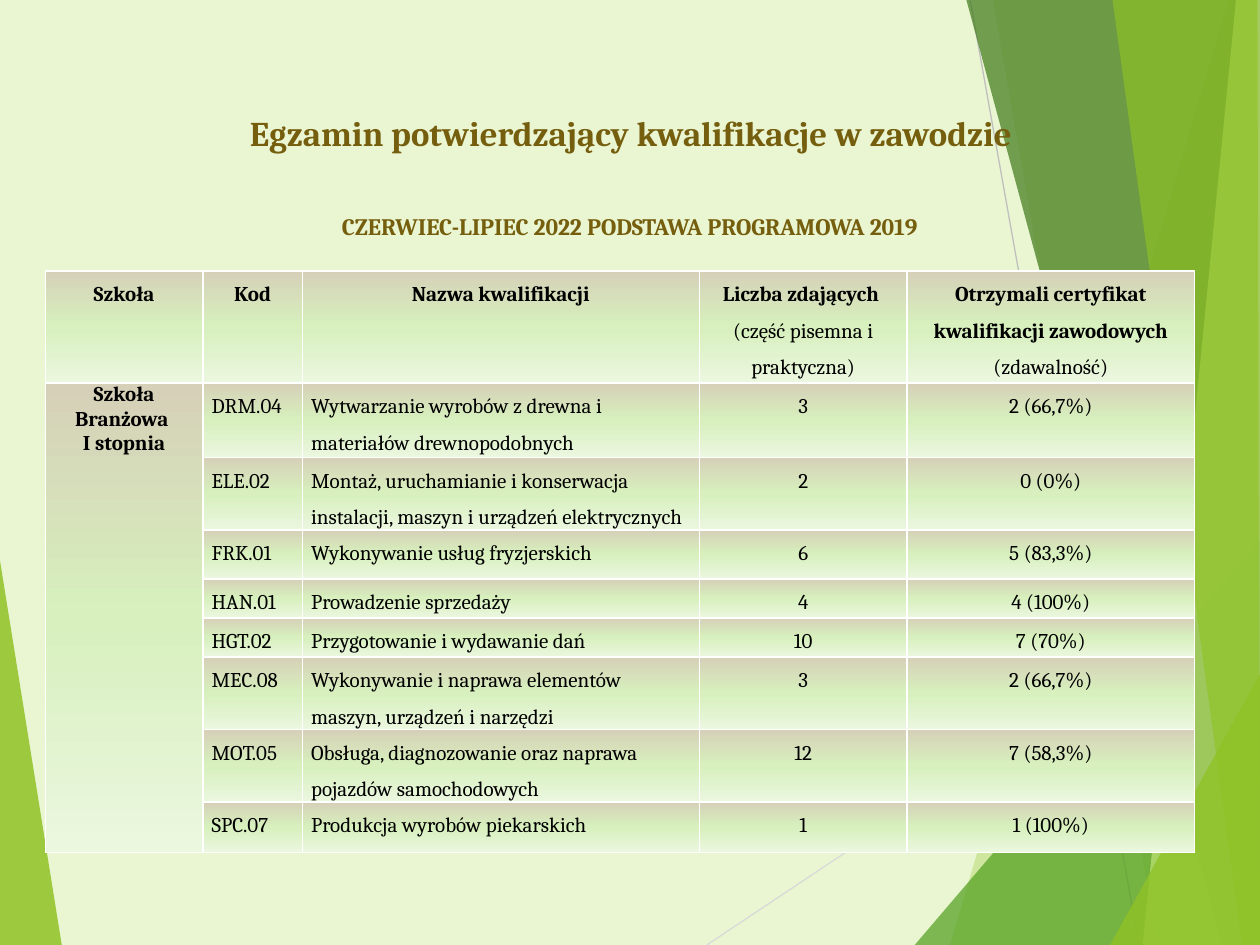
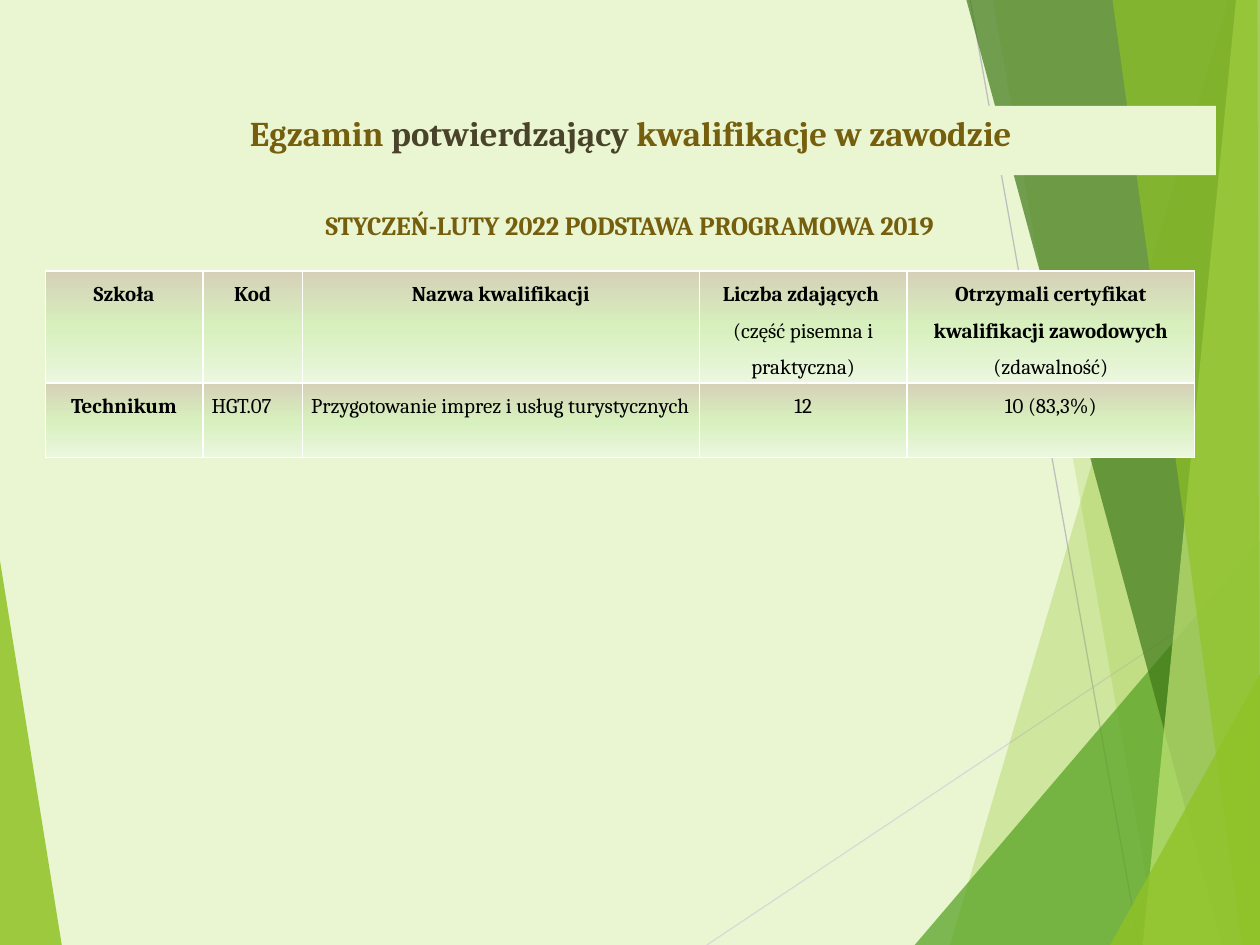
from copy import deepcopy

from pptx import Presentation
from pptx.dml.color import RGBColor
from pptx.enum.shapes import MSO_CONNECTOR
from pptx.enum.text import MSO_ANCHOR, MSO_AUTO_SIZE, PP_ALIGN
from pptx.oxml import parse_xml
from pptx.oxml.ns import nsdecls, qn
from pptx.util import Inches, Pt

STRAIGHT = MSO_CONNECTOR.STRAIGHT
TOP, MIDDLE = MSO_ANCHOR.TOP, MSO_ANCHOR.MIDDLE
NO_AUTOFIT = MSO_AUTO_SIZE.NONE
LEFT, CENTER = PP_ALIGN.LEFT, PP_ALIGN.CENTER

# Shared style
FONT = "Cambria"
BACKGROUND = "EAF6D1"
GOLD, OLIVE, BLACK, WHITE = "755E0D", "48432A", "000000", "FFFFFF"
GREEN, MID_GREEN, DARK_GREEN, LIME = "90C226", "54A021", "3F7819", "C0E474"
CELL_GRADIENT = [(0, "D6D0B8"), (50, "D7F0BD"), (100, "EBF7DF")]
TITLE_ONLY = 5

# Backdrop: thin lines, then translucent facets (colour, opacity %, corners)
LEFT_FACET = (GREEN, 85, [(0, 4.45), (0.49, 7.5), (0, 7.5)])
THIN_LINES = [
    ("D9D9D9", (5.61, 7.5), (10, 4.57)),
    ("BFBFBF", (7.7, 0), (9.04, 7.5)),
]
RIGHT_FACETS = [
    (GREEN, 30, [(9.75, 0), (7.54, 7.5), (10, 7.5), (10, 0)]),
    (GREEN, 20, [(7.88, 0), (9.19, 7.5), (10, 7.5), (10, 0)]),
    (MID_GREEN, 72, [(7.26, 7.5), (10, 4.29), (10, 7.5)]),
    (DARK_GREEN, 70, [(7.67, 0), (9.7, 7.5), (10, 7.5), (10, 0)]),
    (LIME, 70, [(9.81, 0), (9.07, 7.5), (10, 7.5), (10, 0)]),
    (GREEN, 65, [(8.83, 0), (9.86, 7.5), (10, 7.5), (9.98, 0)]),
    (GREEN, 80, [(8.81, 7.5), (10, 5.35), (10, 7.5)]),
]

# Content
TITLE = ["Egzamin ", "potwierdzający", " kwalifikacje w zawodzie"]
COLUMN_WIDTHS = [1.25, 0.79, 3.15, 1.65, 2.28]
COLUMN_ALIGNMENTS = [CENTER, LEFT, LEFT, CENTER, CENTER]
HEADER_HEIGHT = 0.89
HEADER = [
    ["Szkoła"],
    ["Kod"],
    ["Nazwa kwalifikacji"],
    ["Liczba zdających \v", "(część pisemna i praktyczna)"],
    ["Otrzymali certyfikat kwalifikacji zawodowych ", "(zdawalność)"],
]
# Row height, code, qualification, candidates, certificates
SUMMER_ROWS = [
    (0.59, "DRM.04", "Wytwarzanie wyrobów z drewna i materiałów drewnopodobnych", "3", "2 (66,7%)"),
    (0.54, "ELE.02", "Montaż, uruchamianie i konserwacja instalacji, maszyn i urządzeń "
     "elektrycznych", "2", "0 (0%)"),
    (0.39, "FRK.01", "Wykonywanie usług fryzjerskich", "6", "5 (83,3%)"),
    (0.31, "HAN.01", "Prowadzenie sprzedaży", "4", "4 (100%)"),
    (0.31, "HGT.02", "Przygotowanie i wydawanie dań", "10", "7 (70%)"),
    (0.51, "MEC.08", "Wykonywanie i naprawa elementów maszyn, urządzeń i narzędzi",
     "3", "2 (66,7%)"),
    (0.51, "MOT.05", "Obsługa, diagnozowanie oraz naprawa pojazdów samochodowych",
     "12", "7 (58,3%)"),
    (0.4, "SPC.07", "Produkcja wyrobów piekarskich", "1", "1 (100%)"),
]
WINTER_ROWS = [
    (0.59, "HGT.07", "Przygotowanie imprez i usług turystycznych", "12", "10 (83,3%)"),
]


def colour(value):
    return RGBColor.from_string(value)


class ExamDeck:
    """Holds the deck, its style and the current page."""

    def __init__(self):
        self.deck = Presentation()
        self.deck.slide_width, self.deck.slide_height = Inches(10), Inches(7.5)
        fill = self.deck.slide_master.background.fill
        fill.solid()
        fill.fore_color.rgb = colour(BACKGROUND)
        self.page = None

    def new_page(self):
        self.page = self.deck.slides.add_slide(self.deck.slide_layouts[TITLE_ONLY])

    def fill_para(self, para, texts, size, ink=GOLD, align=CENTER, spacing=None, bold=True):
        """Fill a paragraph with one span per text; a closing \\v breaks the line."""
        para.alignment = align
        para.line_spacing = spacing
        for text in texts:
            span = para.add_run()
            span.text = text.rstrip("\v")
            span.font.name, span.font.size = FONT, Pt(size)
            span.font.bold, span.font.color.rgb = bold, colour(ink)
            if text.endswith("\v"):
                para.add_line_break()
        # Line breaks take the format of the text around them
        properties = para.runs[0].font._rPr
        for line_break in para._p.findall(qn("a:br")):
            line_break.append(deepcopy(properties))
        return para.runs

    def facet(self, fill_colour, opacity, corners):
        points = [(Inches(x), Inches(y)) for x, y in corners]
        builder = self.page.shapes.build_freeform(*points[0])
        builder.add_line_segments(points[1:], close=True)
        shape = builder.convert_to_shape()
        shape.shadow.inherit = False
        shape.line.fill.background()
        shape.fill.solid()
        shape.fill.fore_color.rgb = colour(fill_colour)
        tint = shape.element.xpath("./p:spPr/a:solidFill/a:srgbClr")[0]
        tint.append(parse_xml(f'<a:alpha {nsdecls("a")} val="{opacity * 1000}"/>'))
        return shape

    def thin_line(self, line_colour, start, end):
        ends = [Inches(value) for value in (*start, *end)]
        line = self.page.shapes.add_connector(STRAIGHT, *ends)
        line.line.color.rgb = colour(line_colour)
        line.line.width = Pt(0.75)
        line.element.find(qn("p:spPr")).append(parse_xml(f'<a:effectLst {nsdecls("a")}/>'))
        return line

    def backdrop(self):
        """Draw the backdrop once and hand it to the slide master."""
        parts = [self.facet(*LEFT_FACET)]
        parts += [self.thin_line(*line) for line in THIN_LINES]
        parts += [self.facet(*facet) for facet in RIGHT_FACETS]
        group = self.page.shapes.add_group_shape(parts).element
        for number, identity in enumerate(group.xpath(".//p:cNvPr"), start=100):
            identity.set("id", str(number))
        self.deck.slide_master.shapes.element.insert(2, group)

    def title(self, texts):
        box = self.page.shapes.title
        box.left, box.top = Inches(0.36), Inches(0.84)
        box.width, box.height = Inches(9.29), Inches(0.55)
        frame = box.text_frame
        frame.auto_size, frame.vertical_anchor = NO_AUTOFIT, TOP
        self.fill_para(frame.paragraphs[0], texts, 19.8)
        return box

    def subtitle(self, text, size):
        box = self.page.shapes.add_textbox(Inches(2.4), Inches(1.62), Inches(5.2), Inches(0.55))
        frame = box.text_frame
        frame.word_wrap, frame.vertical_anchor = True, MIDDLE
        frame.margin_bottom = Inches(0.2)
        self.fill_para(frame.paragraphs[0], [text], size, spacing=0.7)

    def style_cell(self, cell):
        cell.margin_left = cell.margin_right = Inches(0.07)
        cell.margin_top = cell.margin_bottom = 0
        properties = cell._tc.get_or_add_tcPr()
        for side in ("lnL", "lnR", "lnT", "lnB"):
            properties.append(parse_xml(
                f'<a:{side} {nsdecls("a")} w="{Pt(1)}"><a:solidFill>'
                f'<a:srgbClr val="{WHITE}"/></a:solidFill></a:{side}>'))
        stops = "".join(f'<a:gs pos="{place * 1000}"><a:srgbClr val="{tint}"/></a:gs>'
                        for place, tint in CELL_GRADIENT)
        properties.append(parse_xml(
            f'<a:gradFill {nsdecls("a")}><a:gsLst>{stops}</a:gsLst>'
            '<a:lin ang="5400000" scaled="0"/></a:gradFill>'))

    def results_table(self, school, rows, school_spacing=None):
        heights = [HEADER_HEIGHT] + [row[0] for row in rows]
        table = self.page.shapes.add_table(
            len(heights), len(COLUMN_WIDTHS), Inches(0.36), Inches(2.15),
            Inches(sum(COLUMN_WIDTHS)), Inches(sum(heights))).table
        table.first_row = table.horz_banding = False
        for column, width in zip(table.columns, COLUMN_WIDTHS):
            column.width = Inches(width)
        for row, height in zip(table.rows, heights):
            row.height = Inches(height)
        for cell in table.iter_cells():
            self.style_cell(cell)

        # Header: the first span is bold, the rest is regular
        for index, texts in enumerate(HEADER):
            spans = self.fill_para(table.cell(0, index).text_frame.paragraphs[0],
                                   texts, 12, BLACK, spacing=1.5)
            for span in spans[1:]:
                span.font.bold = False

        # School name beside all its qualifications
        school_cell = table.cell(1, 0)
        if len(rows) > 1:
            school_cell.merge(table.cell(len(rows), 0))
        self.fill_para(school_cell.text_frame.paragraphs[0], school, 12, BLACK,
                       spacing=school_spacing)

        # Qualifications
        for number, (_, *texts) in enumerate(rows, start=1):
            for index, text in enumerate(texts, start=1):
                self.fill_para(table.cell(number, index).text_frame.paragraphs[0], [text], 12,
                               BLACK, COLUMN_ALIGNMENTS[index], 1.5, bold=False)


def main():
    exams = ExamDeck()

    # Slide 1: summer session
    exams.new_page()
    exams.backdrop()
    exams.title(["".join(TITLE)])
    exams.results_table(["Szkoła Branżowa \v", "I stopnia"], SUMMER_ROWS)
    exams.subtitle("CZERWIEC-LIPIEC 2022 PODSTAWA PROGRAMOWA 2019", 13.5)

    # Slide 2: winter session, with a filled title band
    exams.new_page()
    band = exams.title(TITLE)
    band.fill.solid()
    band.fill.fore_color.rgb = colour(BACKGROUND)
    band.text_frame.paragraphs[0].runs[1].font.color.rgb = colour(OLIVE)
    exams.results_table(["Technikum"], WINTER_ROWS, school_spacing=1.5)
    exams.subtitle("STYCZEŃ-LUTY 2022 PODSTAWA PROGRAMOWA 2019", 15)

    exams.deck.save("out.pptx")


if __name__ == "__main__":
    main()
